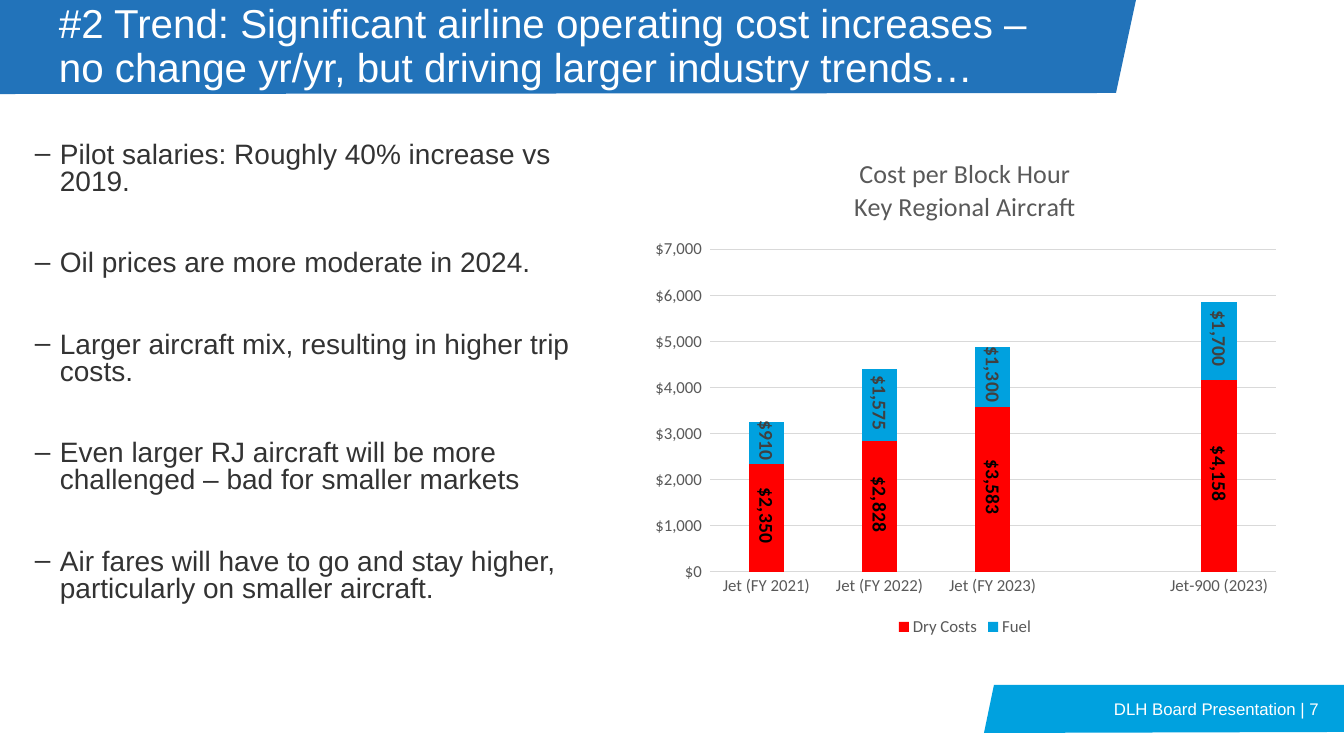
from pptx import Presentation
from pptx.chart.data import CategoryChartData
from pptx.dml.color import RGBColor
from pptx.enum.chart import XL_CHART_TYPE as ChartType, XL_LABEL_POSITION as LabelPos
from pptx.enum.chart import XL_LEGEND_POSITION as LegendPos, XL_TICK_MARK as Tick
from pptx.enum.text import MSO_ANCHOR as Anchor, PP_ALIGN as Align
from pptx.oxml import parse_xml
from pptx.oxml.ns import nsdecls
from pptx.util import Pt

BLUE = RGBColor(0x22, 0x73, 0xBA)
CYAN = RGBColor(0x00, 0xA1, 0xDF)
RED = RGBColor(0xFF, 0x00, 0x00)
WHITE = RGBColor(0xFF, 0xFF, 0xFF)
BLACK = RGBColor(0x00, 0x00, 0x00)
INK = RGBColor(0x33, 0x33, 0x33)
LABEL_GRAY = RGBColor(0x40, 0x40, 0x40)
AXIS_GRAY = RGBColor(0x59, 0x59, 0x59)
GRID_GRAY = RGBColor(0xD9, 0xD9, 0xD9)

HEADLINE = ("#2 Trend: Significant airline operating cost increases – "
            "no change yr/yr, but driving larger industry trends…")
TRENDS = [
    "Pilot salaries: Roughly 40% increase vs 2019.",
    "Oil prices are more moderate in 2024.",
    "Larger aircraft mix, resulting in higher trip costs.",
    "Even larger RJ aircraft will be more challenged – bad for smaller markets",
    "Air fares will have to go and stay higher, particularly on smaller aircraft.",
]
FOOTER = "DLH Board Presentation | 7"
CHART_TITLE = ["Cost per Block Hour", "Key Regional Aircraft"]
AIRCRAFT = ["Jet (FY 2021)", "Jet (FY 2022)", "Jet (FY 2023)", "", "Jet-900 (2023)"]
COSTS = [
    ("Dry Costs", [2350, 2828, 3583, None, 4158], RED, BLACK),
    ("Fuel", [910, 1575, 1300, None, 1700], CYAN, LABEL_GRAY),
]
DOLLARS = '"$"#,##0_);\\("$"#,##0\\)'

HEADER_BAND = [(0, 0), (1136, 0), (1116, 93), (0, 94)]
FOOTER_BAND = [(994, 685), (1344, 685), (1344, 732), (984, 733)]
HEADLINE_BOX = (49, 1, 996, 93)
TRENDS_BOX = (25, 138, 596, 503)
CHART_BOX = (642, 138, 646, 503)
PLOT_BOX = (710, 249, 566, 323)
FOOTER_BOX = (1029, 685, 300, 47)
HANGING = 25

SCALE = 914400 / 100.8


def px(length):
    return round(length * SCALE)


def add_band(corners, color):
    outline = slide.shapes.build_freeform(*corners[0], scale=SCALE)
    outline.add_line_segments(corners[1:], close=True)
    band = outline.convert_to_shape()
    band.shadow.inherit = False
    band.fill.solid()
    band.fill.fore_color.rgb = color
    band.line.fill.background()


def style(font, size, color, name="Calibri", bold=False):
    font.size, font.name, font.bold = Pt(size), name, bold
    font.color.rgb = color


def add_text(box, lines, *, size, color, anchor=Anchor.TOP, align=Align.LEFT,
             spacing=1.0, gap=0, bullet=None):
    frame = slide.shapes.add_textbox(*map(px, box)).text_frame
    frame.word_wrap = True
    frame.vertical_anchor = anchor
    for index, line in enumerate(lines):
        paragraph = frame.add_paragraph() if index else frame.paragraphs[0]
        paragraph.alignment = align
        paragraph.line_spacing = spacing
        paragraph.space_before = Pt(gap if index else 0)
        run = paragraph.add_run()
        run.text = line
        style(run.font, size, color, "Arial")
        if bullet:
            props = paragraph._p.get_or_add_pPr()
            props.set("marL", str(px(HANGING)))
            props.set("indent", str(-px(HANGING)))
            props.append(parse_xml(f'<a:buFont {nsdecls("a")} typeface="Arial"/>'))
            props.append(parse_xml(f'<a:buChar {nsdecls("a")} char="{bullet}"/>'))


def add_cost_chart():
    data = CategoryChartData(number_format=DOLLARS)
    data.categories = AIRCRAFT
    for name, values, _, _ in COSTS:
        data.add_series(name, values)
    chart = slide.shapes.add_chart(
        ChartType.COLUMN_STACKED, *map(px, CHART_BOX), data).chart
    style(chart.font, 12, AXIS_GRAY)

    chart.has_title = True
    title = chart.chart_title.text_frame
    for index, line in enumerate(CHART_TITLE):
        paragraph = title.add_paragraph() if index else title.paragraphs[0]
        run = paragraph.add_run()
        run.text = line
        style(run.font, 18.6, AXIS_GRAY)

    chart.has_legend = True
    chart.legend.position = LegendPos.BOTTOM
    chart.legend.include_in_layout = False
    style(chart.legend.font, 12, AXIS_GRAY)

    for axis in (chart.category_axis, chart.value_axis):
        axis.major_tick_mark = axis.minor_tick_mark = Tick.NONE
        style(axis.tick_labels.font, 12, AXIS_GRAY)
    chart.category_axis.format.line.color.rgb = GRID_GRAY
    chart.category_axis.format.line.width = Pt(0.75)
    costs_axis = chart.value_axis
    costs_axis.minimum_scale, costs_axis.maximum_scale = 0, 7000
    costs_axis.major_unit = 1000
    costs_axis.format.line.fill.background()
    costs_axis.major_gridlines.format.line.color.rgb = GRID_GRAY
    costs_axis.major_gridlines.format.line.width = Pt(0.75)
    costs_axis.tick_labels.number_format = DOLLARS
    costs_axis.tick_labels.number_format_is_linked = False

    plot = chart.plots[0]
    plot.gap_width, plot.overlap = 219, 100
    plot.vary_by_categories = False
    for series, (_, _, fill, label_color) in zip(plot.series, COSTS):
        series.format.fill.solid()
        series.format.fill.fore_color.rgb = fill
        labels = series.data_labels
        labels.show_value = True
        labels.position = LabelPos.CENTER
        labels.number_format = DOLLARS
        labels.number_format_is_linked = False
        style(labels.font, 14, label_color, bold=True)
        body = labels._element.find(".//{*}bodyPr")
        body.set("rot", "5400000")
        body.set("vert", "horz")

    left, top, width, height = CHART_BOX
    x, y, w, h = PLOT_BOX
    fractions = {"x": (x - left) / width, "y": (y - top) / height,
                 "w": w / width, "h": h / height}
    sizes = "".join(f'<c:{key} val="{value:.3f}"/>' for key, value in fractions.items())
    area = chart._chartSpace.chart.plotArea
    for layout in area.findall("{*}layout"):
        area.remove(layout)
    area.insert(0, parse_xml(
        f'<c:layout {nsdecls("c")}><c:manualLayout><c:layoutTarget val="inner"/>'
        f'<c:xMode val="edge"/><c:yMode val="edge"/>{sizes}</c:manualLayout></c:layout>'))


deck = Presentation()
deck.slide_width, deck.slide_height = px(1344), px(756)
slide = deck.slides.add_slide(deck.slide_layouts[6])

add_band(HEADER_BAND, BLUE)
add_band(FOOTER_BAND, CYAN)
add_text(TRENDS_BOX, TRENDS, size=20, color=INK, spacing=0.8, gap=39, bullet="–")
add_cost_chart()
add_text(HEADLINE_BOX, [HEADLINE], size=28.8, color=WHITE, anchor=Anchor.MIDDLE, spacing=0.9)
add_text(FOOTER_BOX, [FOOTER], size=12, color=WHITE, anchor=Anchor.MIDDLE, align=Align.RIGHT)

deck.save("out.pptx")
